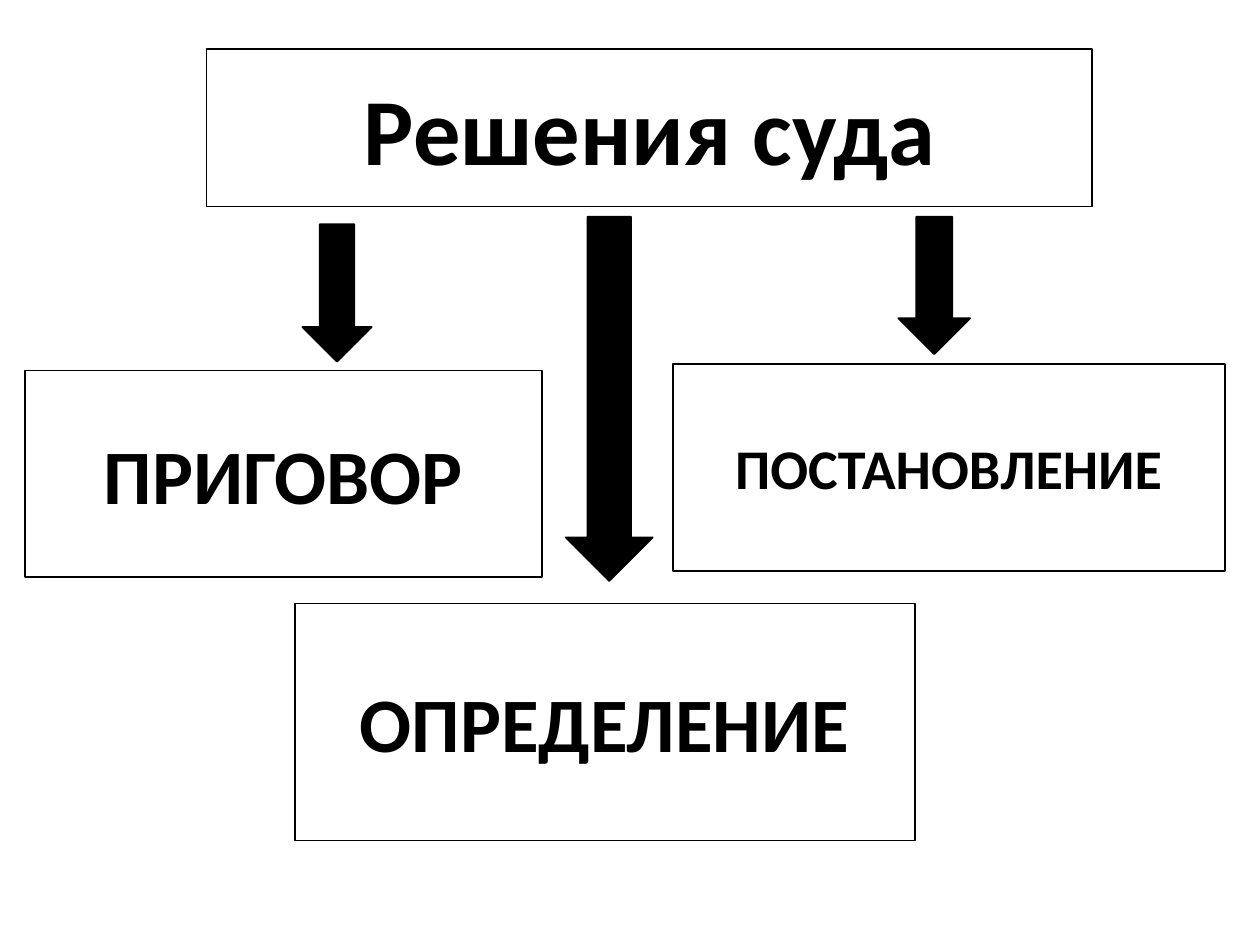
import pptx
import pptx.dml.color
import pptx.enum.shapes
import pptx.enum.text
import pptx.util
from pptx.util import Inches

COLORS = {"ink": "000000", "paper": "FFFFFF"}
SHAPES = pptx.enum.shapes.MSO_SHAPE

# text, font size, (left, top, width, height)
BOXES = [
    ("Решения суда", 54, (1.64, 0.39, 7.03, 1.25)),
    ("ПРИГОВОР", 44, (0.2, 2.94, 4.1, 1.64)),
    ("ПОСТАНОВЛЕНИЕ", 32, (5.34, 2.89, 4.38, 1.64)),
    ("ОПРЕДЕЛЕНИЕ", 44, (2.34, 4.79, 4.92, 1.88)),
]
ARROWS = [
    (2.4, 1.78, 0.55, 1.09),
    (7.13, 1.72, 0.57, 1.09),
    (4.49, 1.72, 0.69, 2.89),
]


def color(name):
    return pptx.dml.color.RGBColor.from_string(COLORS[name])


def add_outlined_shape(slide, kind, place, fill):
    shape = slide.shapes.add_shape(kind, *map(Inches, place))
    shape.shadow.inherit = False
    shape.fill.solid()
    shape.fill.fore_color.rgb = color(fill)
    shape.line.color.rgb = color("ink")
    shape.line.width = pptx.util.Pt(1)
    return shape


def add_box(slide, text, size, place):
    shape = add_outlined_shape(slide, SHAPES.RECTANGLE, place, "paper")
    frame = shape.text_frame
    frame.word_wrap = True
    frame.vertical_anchor = pptx.enum.text.MSO_ANCHOR.MIDDLE
    paragraph = frame.paragraphs[0]
    paragraph.text = text
    paragraph.alignment = pptx.enum.text.PP_ALIGN.CENTER
    paragraph.font.name = "Calibri"
    paragraph.font.size = pptx.util.Pt(size)
    paragraph.font.bold = True
    paragraph.font.color.rgb = color("ink")


def main():
    presentation = pptx.Presentation()
    presentation.slide_width = Inches(10)
    presentation.slide_height = Inches(7.5)
    slide = presentation.slides.add_slide(presentation.slide_layouts[6])
    for text, size, place in BOXES:
        add_box(slide, text, size, place)
    for place in ARROWS:
        add_outlined_shape(slide, SHAPES.DOWN_ARROW, place, "ink")
    presentation.save("out.pptx")


if __name__ == "__main__":
    main()
